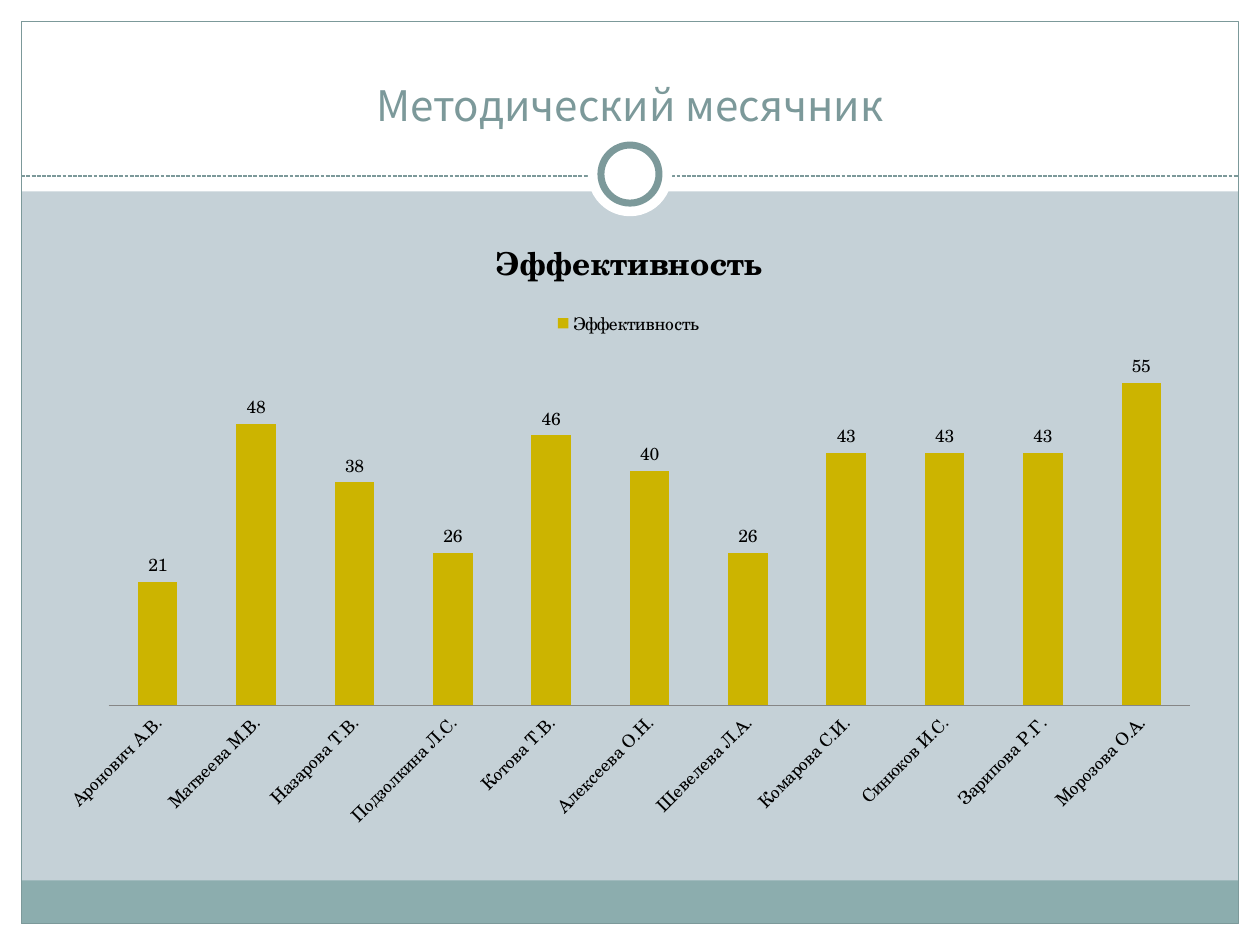
from pptx import Presentation
from pptx import util as u
from pptx.chart.data import CategoryChartData
from pptx.dml.color import RGBColor
from pptx.enum import chart as ch, dml, shapes, text
from pptx.oxml.ns import qn
from lxml import etree


def rgb(code):
    return RGBColor.from_string(code)


def add_block(kind, left, top, width, height, fill=None, line=None, weight=0.75):
    block = slide.shapes.add_shape(kind, u.Cm(left), u.Cm(top), u.Cm(width), u.Cm(height))
    block.shadow.inherit = False
    if fill:
        block.fill.solid()
        block.fill.fore_color.rgb = rgb(fill)
    else:
        block.fill.background()
    if line:
        block.line.color.rgb = rgb(line)
        block.line.width = u.Pt(weight)
    else:
        block.line.fill.background()


WHITE, TEAL, DARK_TEAL, GOLD = "FFFFFF", "8CADAE", "7C999A", "CCB400"
RECT, OVAL = shapes.MSO_SHAPE.RECTANGLE, shapes.MSO_SHAPE.OVAL
WIDTH, HEIGHT, MARGIN = 25.4, 19.05, 0.43

deck = Presentation()
deck.slide_width, deck.slide_height = u.Cm(WIDTH), u.Cm(HEIGHT)
slide = deck.slides.add_slide(deck.slide_layouts[6])
slide.background.fill.solid()
slide.background.fill.fore_color.rgb = rgb("C5D1D7")

inner_width = WIDTH - 2 * MARGIN
for left, top, width, height in [
    (0, HEIGHT - MARGIN, WIDTH, MARGIN),
    (0, 0, WIDTH, 3.86),
    (0, 0, MARGIN, HEIGHT),
    (WIDTH - MARGIN, 0, MARGIN, HEIGHT),
]:
    add_block(RECT, left, top, width, height, WHITE)
add_block(RECT, MARGIN, 17.75, inner_width, 0.87, TEAL)
add_block(RECT, MARGIN, MARGIN, inner_width, HEIGHT - 2 * MARGIN, line=DARK_TEAL)

divider = slide.shapes.add_connector(
    shapes.MSO_CONNECTOR.STRAIGHT, u.Cm(MARGIN), u.Cm(3.55), u.Cm(WIDTH - MARGIN), u.Cm(3.55))
divider.line.color.rgb = rgb(DARK_TEAL)
divider.line.width = u.Pt(0.75)
divider.line.dash_style = dml.MSO_LINE.SQUARE_DOT
etree.SubElement(divider._element.spPr, qn("a:effectLst"))

for size, outline in [(1.7, None), (1.17, DARK_TEAL)]:
    add_block(OVAL, (WIDTH - size) / 2, 3.51 - size / 2, size, size, WHITE, outline, 4)

heading = slide.shapes.add_textbox(u.Cm(0.85), u.Cm(0.64), u.Cm(23.7), u.Cm(2.1)).text_frame
heading.word_wrap = True
heading.vertical_anchor = text.MSO_ANCHOR.BOTTOM
heading.text = "Методический месячник"
heading_line = heading.paragraphs[0]
heading_line.alignment = text.PP_ALIGN.CENTER
heading_line.font.size = u.Pt(24)
heading_line.font.name = "Noto Sans CJK KR"
heading_line.font.color.rgb = rgb(DARK_TEAL)

scores = {
    "Аронович А.В.": 21, "Матвеева М.В.": 48, "Назарова Т.В.": 38,
    "Подзолкина Л.С.": 26, "Котова Т.В.": 46, "Алексеева О.Н.": 40,
    "Шевелева Л.А.": 26, "Комарова С.И.": 43, "Синюков И.С.": 43,
    "Зарипова Р.Г.": 43, "Морозова О.А.": 55,
}
efficiency = CategoryChartData()
efficiency.categories = list(scores)
efficiency.add_series("Эффективность", list(scores.values()))
chart = slide.shapes.add_chart(
    ch.XL_CHART_TYPE.COLUMN_CLUSTERED,
    u.Cm(0.85), u.Cm(4.23), u.Cm(23.62), u.Cm(12.7), efficiency).chart
chart.font.size = u.Pt(10)
chart.font.name = "TeX Gyre Schola"
chart.font.color.rgb = rgb("000000")

chart.has_title = True
chart.chart_title.include_in_layout = False
chart.chart_title.text_frame.text = "Эффективность"
title_font = chart.chart_title.text_frame.paragraphs[0].font
title_font.size = u.Pt(18)
title_font.bold = True
title_font.name = "TeX Gyre Schola"
title_font.color.rgb = rgb("000000")

chart.has_legend = True
chart.legend.position = ch.XL_LEGEND_POSITION.TOP
chart.legend.include_in_layout = False

teachers, points = chart.category_axis, chart.value_axis
teachers.major_tick_mark = ch.XL_TICK_MARK.NONE
teachers.format.line.color.rgb = rgb("868686")
points.visible = False
points.has_major_gridlines = False
points.minimum_scale, points.maximum_scale = 0, 60

columns = chart.plots[0]
columns.vary_by_categories = False
columns.gap_width, columns.overlap = 150, -25
columns.series[0].format.fill.solid()
columns.series[0].format.fill.fore_color.rgb = rgb(GOLD)
columns.has_data_labels = True
columns.data_labels.show_value = True
columns.data_labels.position = ch.XL_LABEL_POSITION.OUTSIDE_END

deck.save("out.pptx")
